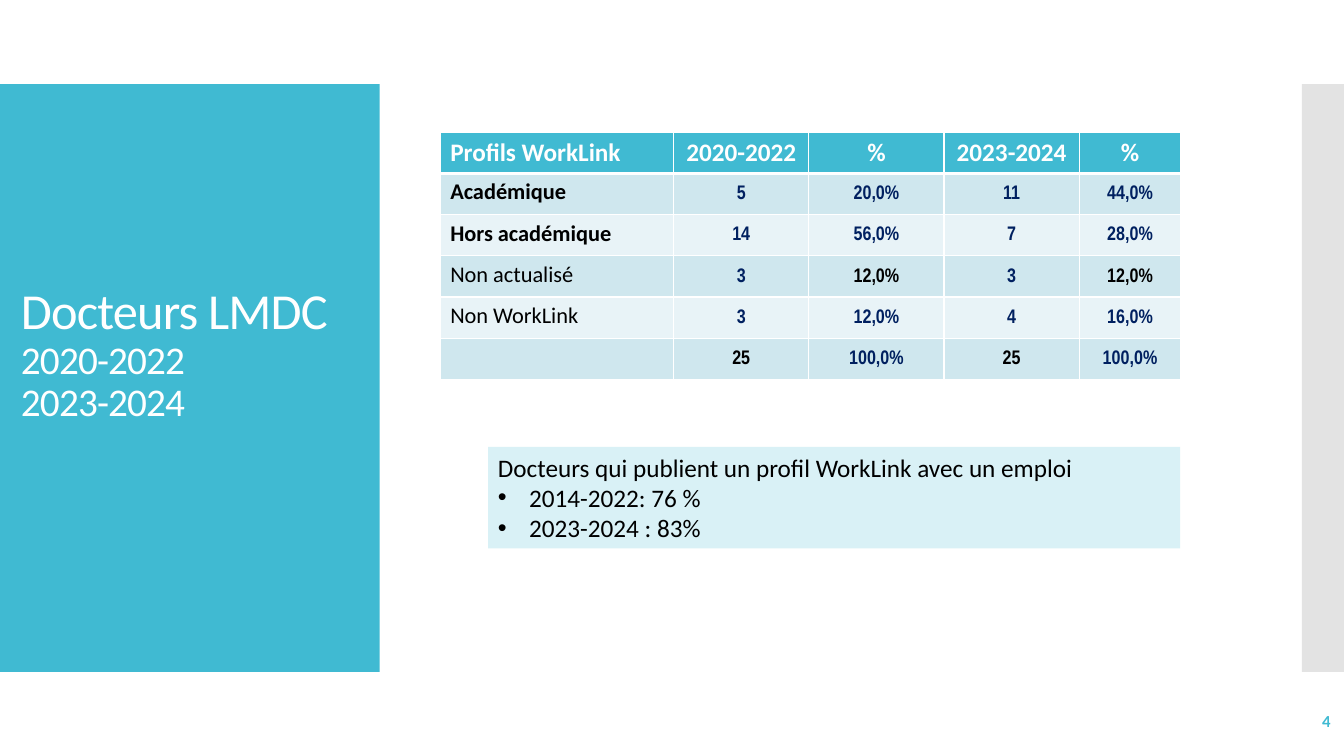
from lxml import etree
from pptx import Presentation
from pptx.dml.color import RGBColor
from pptx.enum.shapes import MSO_SHAPE
from pptx.enum.text import MSO_ANCHOR, MSO_AUTO_SIZE, PP_ALIGN
from pptx.oxml.ns import qn
from pptx.util import Inches, Pt

RECT = MSO_SHAPE.RECTANGLE
MIDDLE = MSO_ANCHOR.MIDDLE
LEFT, CENTER, RIGHT = PP_ALIGN.LEFT, PP_ALIGN.CENTER, PP_ALIGN.RIGHT
NO_FIT = MSO_AUTO_SIZE.NONE

COLORS = {
    "teal": "40BAD2", "gray": "C8C8C8", "white": "FFFFFF", "black": "000000",
    "navy": "002060", "dark": "CFE7EE", "light": "E8F3F7", "pale": "D9F1F6",
}
COLS, ROWS = 160, 90  # grid cells across and down the slide


def rgb(name):
    return RGBColor.from_string(COLORS[name])


class Deck:
    body, narrow = "Calibri", "Arial Narrow"

    def __init__(self):
        self.prs = Presentation()
        self.prs.slide_width, self.prs.slide_height = Inches(13.33), Inches(7.5)
        self.slide = self.prs.slides.add_slide(self.prs.slide_layouts[5])
        self.shapes = self.slide.shapes

    def x(self, cols):
        return round(self.prs.slide_width * cols / COLS)

    def y(self, rows):
        return round(self.prs.slide_height * rows / ROWS)

    def area(self, left, top, width, height):
        return self.x(left), self.y(top), self.x(width), self.y(height)

    def style(self, para, size, color, bold=False, face=None, align=LEFT):
        font = para.font
        font.size, font.bold, font.name = Pt(size), bold, face or self.body
        font.color.rgb = rgb(color)
        para.alignment = align

    def title(self, area, lines, color, spread):
        shape = self.shapes.title
        shape.left, shape.top, shape.width, shape.height = self.area(*area)
        frame = shape.text_frame
        frame.auto_size, frame.vertical_anchor = NO_FIT, MIDDLE
        frame.margin_bottom = self.y(5.9)  # lifts the lines above the middle
        frame.text = "\n".join(text for text, _ in lines)
        for para, (_, size) in zip(frame.paragraphs, lines):
            self.style(para, size, color)
            para.line_spacing = 0.9
            para.font._rPr.set("spc", str(spread))

    def panel(self, area, color, alpha=None):
        shape = self.shapes.add_shape(RECT, *self.area(*area))
        shape.shadow.inherit = False
        shape.fill.solid()
        shape.fill.fore_color.rgb = rgb(color)
        shape.line.fill.background()
        if alpha:
            tint = shape._element.spPr.find(".//" + qn("a:srgbClr"))
            etree.SubElement(tint, qn("a:alpha"), val=str(alpha * 1000))
        return shape

    def bullet(self, para, indent):
        props = para._p.get_or_add_pPr()
        props.set("marL", str(Inches(indent)))
        props.set("indent", str(-Inches(indent)))
        font = etree.Element(qn("a:buFont"), typeface="Arial")
        mark = etree.Element(qn("a:buChar"), char="•")
        props.insert(0, font)
        font.addnext(mark)

    def note(self, area, color, head, items):
        frame = self.panel(area, color).text_frame
        frame.word_wrap, frame.vertical_anchor = True, MSO_ANCHOR.TOP
        frame.text = "\n".join([head, *items])
        for para in frame.paragraphs:
            self.style(para, 18, "black")
        for para in frame.paragraphs[1:]:
            self.bullet(para, 0.31)

    def label(self, area, text, size, color):
        frame = self.shapes.add_textbox(*self.area(*area)).text_frame
        frame.word_wrap, frame.vertical_anchor = True, MIDDLE
        frame.text = text
        self.style(frame.paragraphs[0], size, color, True, align=RIGHT)

    def border(self, cell, row):
        props = cell._tc.get_or_add_tcPr()
        wide = {"lnB": 0, "lnT": 1}  # rows that touch the thick rule
        for spot, side in enumerate(("lnL", "lnR", "lnT", "lnB")):
            width = 3 if wide.get(side) == row else 1
            line = etree.Element(qn("a:" + side), w=str(Pt(width)))
            fill = etree.SubElement(line, qn("a:solidFill"))
            etree.SubElement(fill, qn("a:srgbClr"), val=COLORS["white"])
            props.insert(spot, line)

    def cell(self, cell, row, col, text, black):
        cell.fill.solid()
        band = "dark" if row % 2 else "light"
        cell.fill.fore_color.rgb = rgb(band if row else "teal")
        self.border(cell, row)
        cell.text = text
        para = cell.text_frame.paragraphs[0]
        if row == 0:
            self.style(para, 18, "white", True, align=CENTER if col else LEFT)
        elif col == 0:
            self.style(para, 16, "black", row < 3)
        else:
            cell.vertical_anchor = MIDDLE
            cell.margin_left = cell.margin_right = cell.margin_top = Inches(0.01)
            cell.margin_bottom = 0
            self.style(para, 14, "black" if black else "navy", True,
                       self.narrow, CENTER)

    def table(self, left, top, widths, heights, data, black):
        area = self.area(left, top, sum(widths), sum(heights))
        table = self.shapes.add_table(len(data), len(widths), *area).table
        for col, width in zip(table.columns, widths):
            col.width = self.x(width)
        for row, height in zip(table.rows, heights):
            row.height = self.y(height)
        for r, line in enumerate(data):
            for c, text in enumerate(line):
                self.cell(table.cell(r, c), r, c, text, (r, c) in black)


PROFILES = [
    ["Profils WorkLink", "2020-2022", "%", "2023-2024", "%"],
    ["Académique", "5", "20,0%", "11", "44,0%"],
    ["Hors académique", "14", "56,0%", "7", "28,0%"],
    ["Non actualisé", "3", "12,0%", "3", "12,0%"],
    ["Non WorkLink", "3", "12,0%", "4", "16,0%"],
    ["", "25", "100,0%", "25", "100,0%"],
]
BLACK = {(3, 2), (3, 4), (5, 1), (5, 3)}


def main():
    deck = Deck()

    # Side bands, placed behind the title
    bands = [deck.panel((0, 10, 45.2, 70), "teal"),
             deck.panel((155, 10, 5, 70), "gray", 50)]
    for band in bands:
        deck.shapes.title._element.addprevious(band._element)

    # Title
    deck.title((1.3, 14.8, 45.2, 60.4),
               [("Docteurs LMDC", 36), ("2020-2022", 28), ("2023-2024", 28)],
               "white", -60)

    # Profile counts
    deck.table(52.4, 15.8, [27.8, 16.1, 16.1, 16.1, 12.1],
               [4.3] + [4.9] * 5, PROFILES, BLACK)

    # Employment summary
    deck.note((58.1, 53.2, 82.4, 12.1), "pale",
              "Docteurs qui publient un profil WorkLink avec un emploi",
              ["2014-2022: 76 %", "2023-2024 : 83%"])

    # Page number
    deck.label((139.6, 83.4, 20, 4.8), "4", 12, "teal")

    deck.prs.save("out.pptx")


if __name__ == "__main__":
    main()
